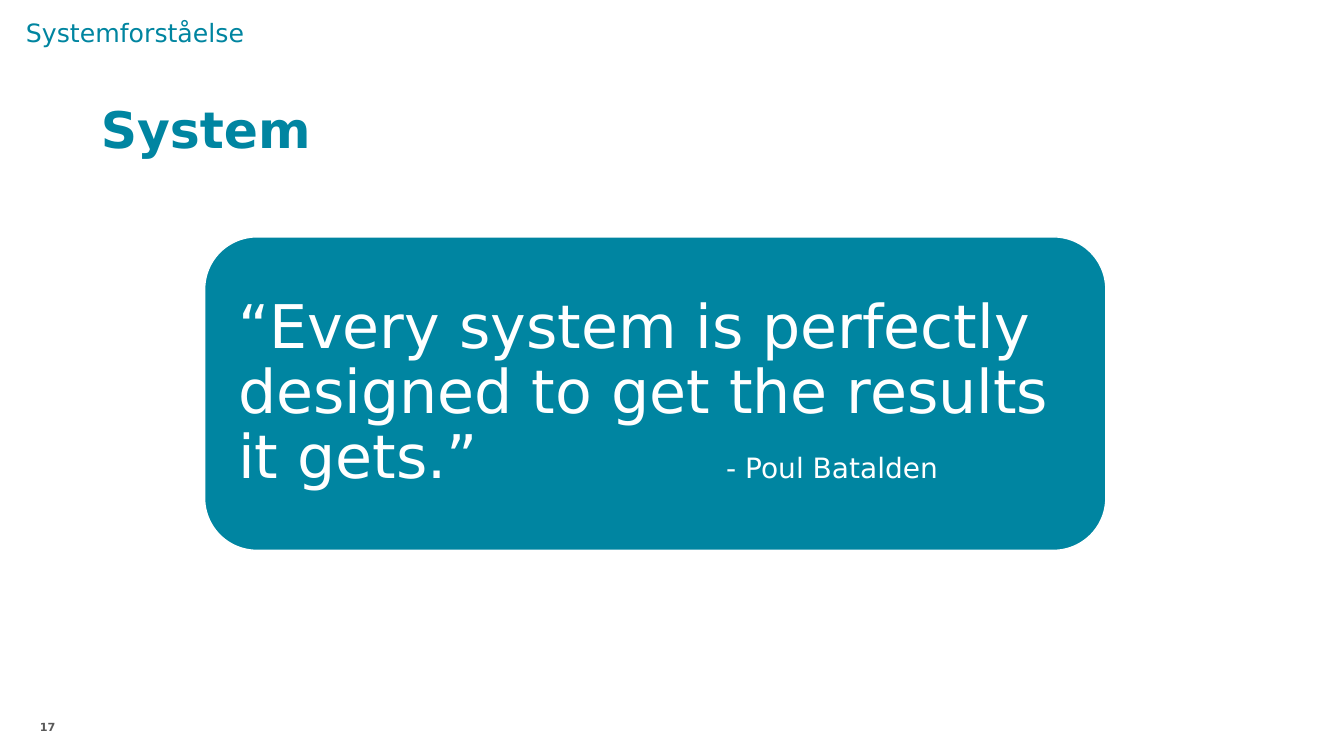
"""Build a slide with a quotation about systems in a rounded panel."""
from lxml import etree
from pptx import Presentation
from pptx import util as u
from pptx.dml.color import RGBColor
from pptx.enum import shapes, text
from pptx.oxml.ns import qn

TEAL = RGBColor(0x00, 0x85, 0xA1)
BLUE = RGBColor(0x00, 0x85, 0xA0)
GREY = RGBColor(0x59, 0x59, 0x59)
WHITE = RGBColor(0xFF, 0xFF, 0xFF)
FONT = "DejaVu Sans"
LEFT, RIGHT = text.PP_ALIGN.LEFT, text.PP_ALIGN.RIGHT
TOP, MID, LOW = (text.MSO_ANCHOR.TOP, text.MSO_ANCHOR.MIDDLE,
                 text.MSO_ANCHOR.BOTTOM)

PANEL = (146.2, 169.2, 643.7, 223.9)
INSET = 10.9
QUOTE = "“Every system is perfectly designed to get the results it gets.”"
AUTHOR = "- Poul Batalden"
TAB = 348.6

LABELS = [
    ("System", (72, 28.8, 759.6, 85), (0, 0), 36, TEAL, True, LEFT, LOW, 0.9),
    ("17", (11.5, 514.8, 28.1, 25.2), (0, 0), 8, GREY, True, RIGHT, TOP, 1),
    ("Systemforståelse", (11.5, 8.6, 479.5, 29), (7.2, 3.6), 18, BLUE, False,
     LEFT, TOP, 1),
]


def add_box(slide, area, pad, anchor):
    """Add a wrapping text box and return its text frame."""
    frame = slide.shapes.add_textbox(*map(u.Pt, area)).text_frame
    frame.word_wrap = True
    frame.vertical_anchor = anchor
    frame.margin_left = frame.margin_right = u.Pt(pad[0])
    frame.margin_top = frame.margin_bottom = u.Pt(pad[1])
    return frame


def style(run, size, color, bold=False):
    """Set the font of a run."""
    run.font.name = FONT
    run.font.size = u.Pt(size)
    run.font.bold = bold
    run.font.color.rgb = color


def add_label(slide, words, area, pad, size, color, bold, align, anchor, lead):
    """Add a one-line label."""
    para = add_box(slide, area, pad, anchor).paragraphs[0]
    para.text = words
    para.alignment = align
    para.line_spacing = lead
    style(para.runs[0], size, color, bold)


def add_quote(slide):
    """Add the panel with the quotation and its author at a tab stop."""
    panel = slide.shapes.add_shape(
        shapes.MSO_SHAPE.ROUNDED_RECTANGLE, *map(u.Pt, PANEL))
    panel.shadow.inherit = False
    panel.fill.solid()
    panel.fill.fore_color.rgb = TEAL
    panel.line.color.rgb = WHITE
    panel.line.width = u.Pt(1)

    left, top, width, height = PANEL
    area = (left + INSET, top + INSET, width - 2 * INSET, height - 2 * INSET)
    para = add_box(slide, area, (13, 13), MID).paragraphs[0]
    stops = etree.SubElement(para._p.get_or_add_pPr(), qn("a:tabLst"))
    etree.SubElement(stops, qn("a:tab"), pos=str(u.Pt(TAB)), algn="l")
    para.line_spacing = 0.9
    for words, size in ((QUOTE + "\t", 43), (AUTHOR, 20)):
        run = para.add_run()
        run.text = words
        style(run, size, WHITE)


def main():
    """Build and save the slide."""
    deck = Presentation()
    deck.slide_width, deck.slide_height = u.Pt(960), u.Pt(540)
    slide = deck.slides.add_slide(deck.slide_layouts[6])
    add_quote(slide)
    for label in LABELS:
        add_label(slide, *label)
    deck.save("out.pptx")


if __name__ == "__main__":
    main()
